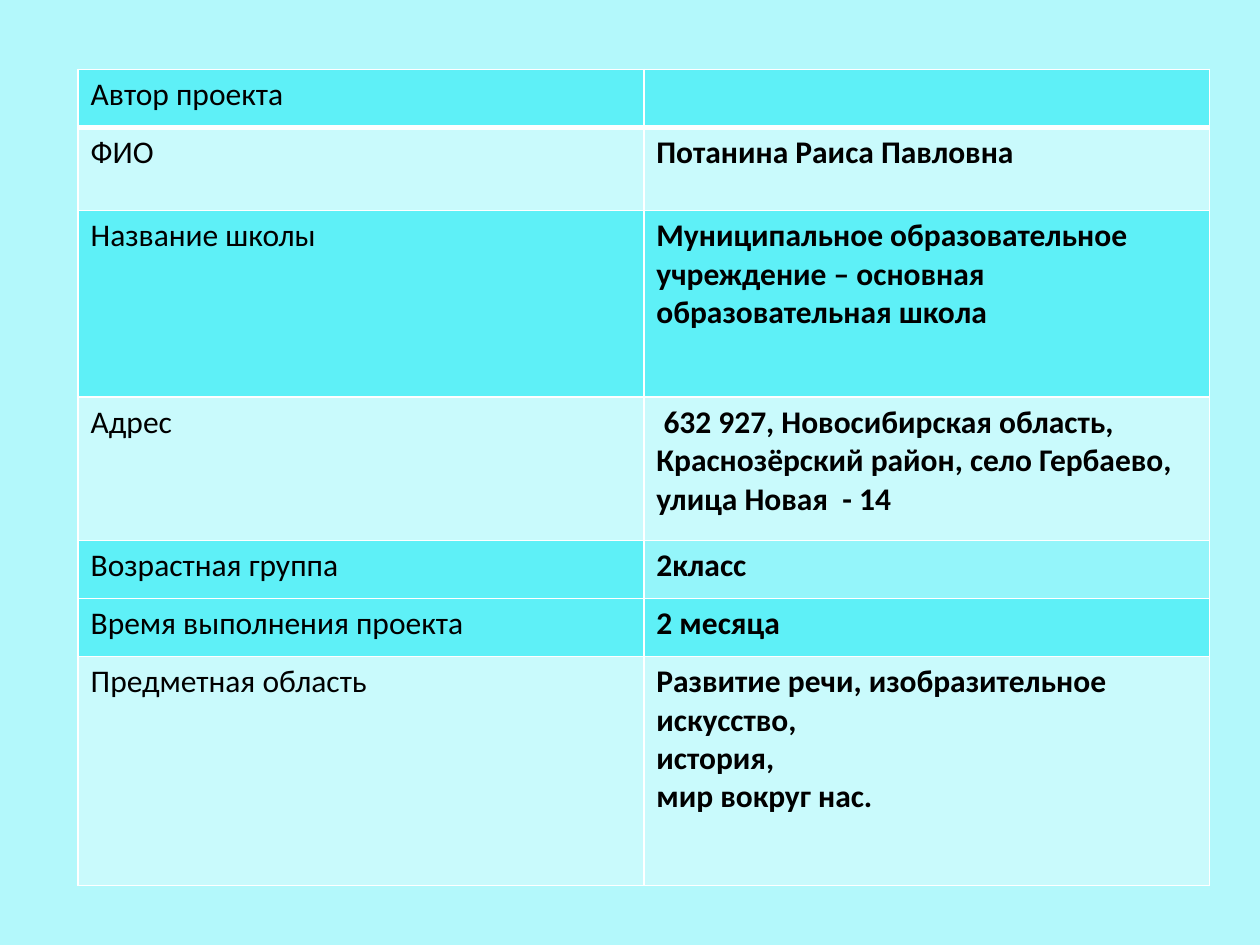
import pptx
import pptx.util
import pptx.dml.color
import pptx.oxml.ns
import lxml.etree

Pt = pptx.util.Pt
CYAN, PALE, MID = "5EF0F7", "C9FAFC", "94F5FA"
WIDTH = 323.28

ROWS = [
    (33.12, "Автор проекта", [], CYAN, CYAN),
    (47.52, "ФИО", ["Потанина Раиса Павловна"], PALE, PALE),
    (106.56, "Название школы",
     ["Муниципальное образовательное учреждение – основная образовательная школа"],
     CYAN, CYAN),
    (82.08, "Адрес",
     [" 632 927, Новосибирская область,",
      "Краснозёрский район, село Гербаево,",
      "улица Новая  - 14"], PALE, PALE),
    (33.12, "Возрастная группа", ["2класс"], CYAN, MID),
    (33.12, "Время выполнения проекта", ["2 месяца"], CYAN, CYAN),
    (131.04, "Предметная область",
     ["Развитие речи, изобразительное искусство,", "история,", "мир вокруг нас."],
     PALE, PALE),
]


def paint(fill, color):
    fill.solid()
    fill.fore_color.rgb = pptx.dml.color.RGBColor.from_string(color)


def edge(cell, side, width):
    qn = pptx.oxml.ns.qn
    props = cell._tc.get_or_add_tcPr()
    line = lxml.etree.SubElement(props, qn("a:ln" + side), w=str(Pt(width)))
    solid = lxml.etree.SubElement(line, qn("a:solidFill"))
    lxml.etree.SubElement(solid, qn("a:srgbClr"), val="FFFFFF")


def write(cell, lines, bold):
    frame = cell.text_frame
    for i, line in enumerate(lines):
        para = frame.add_paragraph() if i else frame.paragraphs[0]
        run = para.add_run()
        run.text = line
        run.font.name = "Calibri"
        run.font.size = Pt(18)
        run.font.bold = bold
        paint(run.font.fill, "000000")


def style(cell, row, color):
    widths = {"L": 1, "R": 1, "T": 3 if row == 1 else 1, "B": 3 if row == 0 else 1}
    for side, width in widths.items():
        edge(cell, side, width)
    paint(cell.fill, color)


def grid(slide):
    height = sum(row[0] for row in ROWS)
    frame = slide.shapes.add_table(
        len(ROWS), 2, Pt(44.64), Pt(39.6), Pt(2 * WIDTH), Pt(height))
    table = frame.table
    for col in table.columns:
        col.width = Pt(WIDTH)
    for i, (tall, label, lines, left, right) in enumerate(ROWS):
        table.rows[i].height = Pt(tall)
        write(table.cell(i, 0), [label], False)
        write(table.cell(i, 1), lines, True)
        style(table.cell(i, 0), i, left)
        style(table.cell(i, 1), i, right)


def main():
    deck = pptx.Presentation()
    deck.slide_width, deck.slide_height = Pt(720), Pt(540)
    slide = deck.slides.add_slide(deck.slide_layouts[6])
    paint(slide.background.fill, "B3F8FB")
    grid(slide)
    deck.save("out.pptx")


if __name__ == "__main__":
    main()
